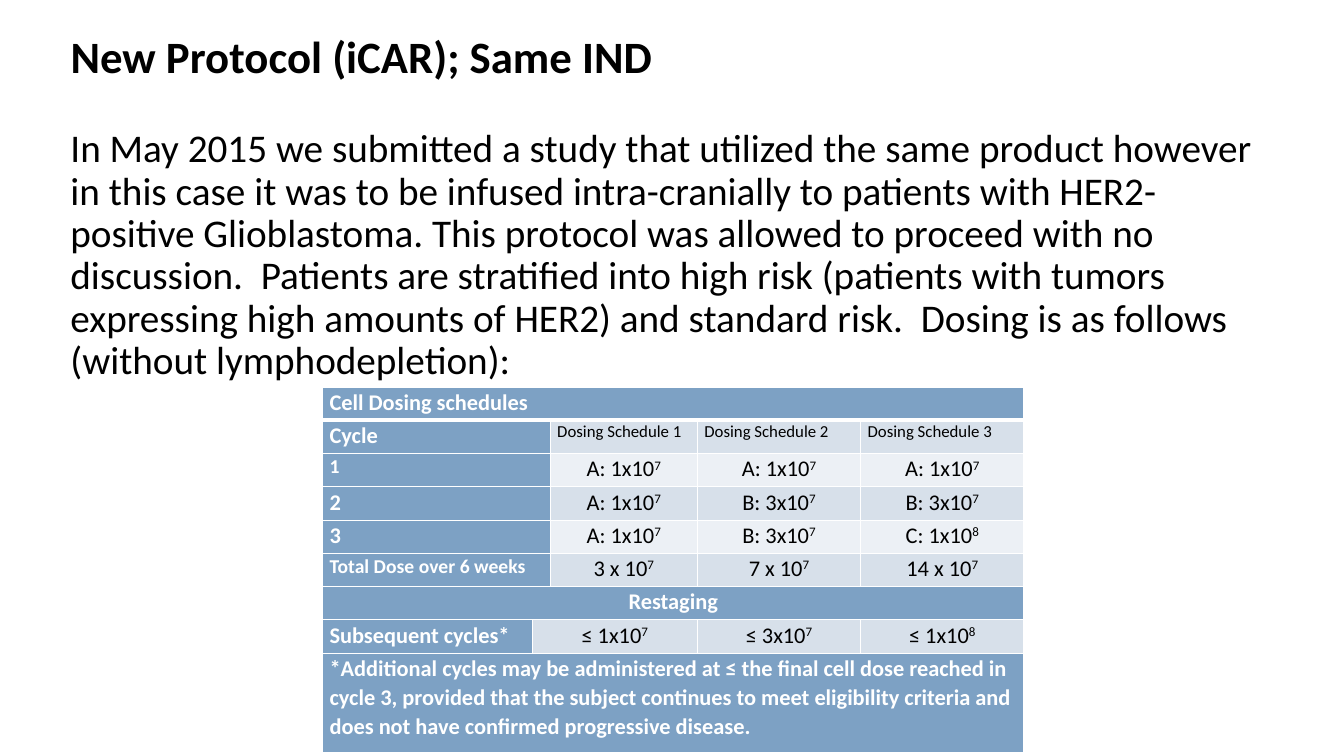
from dataclasses import dataclass

from lxml import etree
from pptx import Presentation
from pptx.dml.color import RGBColor
from pptx.enum.text import MSO_ANCHOR, MSO_AUTO_SIZE, PP_ALIGN
from pptx.oxml.ns import qn
from pptx.util import Inches, Length, Pt

LEFT, CENTER = PP_ALIGN.LEFT, PP_ALIGN.CENTER
TOP, MIDDLE = MSO_ANCHOR.TOP, MSO_ANCHOR.MIDDLE
NO_AUTOFIT = MSO_AUTO_SIZE.NONE

SLIDE_WIDTH, SLIDE_HEIGHT = 13.33, 7.5
FONT = "Calibri"
COLORS = {
    "text": "000000",
    "label_text": "FFFFFF",
    "border": "FFFFFF",
    "label": "7DA1C4",
    "odd": "D7E0EA",
    "even": "ECF0F5",
}
TITLE = "New Protocol (iCAR); Same IND"
STUDY = (
    "In May 2015 we submitted a study that utilized the same product however in this "
    "case it was to be infused intra-cranially to patients with HER2-positive "
    "Glioblastoma. This protocol was allowed to proceed with no discussion.  Patients "
    "are stratified into high risk (patients with tumors expressing high amounts of "
    "HER2) and standard risk.  Dosing is as follows (without lymphodepletion):"
)
NOTE = (
    "*Additional cycles may be administered at ≤ the final cell dose reached in cycle "
    "3, provided that the subject continues to meet eligibility criteria and does not "
    "have confirmed progressive disease."
)


@dataclass(frozen=True)
class Area:
    """A box in percent of the slide's width and height."""
    left: float
    top: float
    width: float
    height: float


@dataclass(frozen=True)
class ScheduleRow:
    """A label and its entries; ^ marks the start of a superscript."""
    label: str
    entries: tuple[str, ...] = ()
    band: str = "odd"
    label_size: int = 16
    entry_size: int = 16
    label_align: PP_ALIGN = LEFT
    entry_align: PP_ALIGN = CENTER
    label_columns: int = 2
    height: float = 4.4


TITLE_AREA = Area(4.5, 3.6, 74.8, 8.5)
STUDY_AREA = Area(4.5, 16.4, 91, 75.6)
SCHEDULE_AREA = Area(24, 51.2, 52, 48.4)
SCHEDULE_COLUMNS = (15.6, 1.2, 10.95, 12.15, 12.15)
SCHEDULE = (
    ScheduleRow("Cell Dosing schedules", label_columns=5),
    ScheduleRow("Cycle", tuple(f"Dosing Schedule {n}" for n in (1, 2, 3)),
                entry_size=12, entry_align=LEFT),
    ScheduleRow("1", ("A: 1x10^7", "A: 1x10^7", "A: 1x10^7"), "even", label_size=14),
    ScheduleRow("2", ("A: 1x10^7", "B: 3x10^7", "B: 3x10^7")),
    ScheduleRow("3", ("A: 1x10^7", "B: 3x10^7", "C: 1x10^8"), "even"),
    ScheduleRow("Total Dose over 6 weeks", ("3 x 10^7", "7 x 10^7", "14 x 10^7"),
                label_size=14),
    ScheduleRow("Restaging", label_align=CENTER, label_columns=5),
    ScheduleRow("Subsequent cycles*", ("≤ 1x10^7", "≤ 3x10^7", "≤ 1x10^8"),
                label_columns=1),
    ScheduleRow(NOTE, label_columns=5, height=13.2),
)


def across(percent: float) -> Length:
    return Inches(SLIDE_WIDTH * percent / 100)


def down(percent: float) -> Length:
    return Inches(SLIDE_HEIGHT * percent / 100)


def bounds(area: Area) -> tuple[Length, ...]:
    return across(area.left), down(area.top), across(area.width), down(area.height)


def write(frame, text: str, *, size: int, color: str = "text", bold: bool = False,
          align: PP_ALIGN = LEFT, spacing: float = 0.9) -> None:
    frame.word_wrap = True
    paragraph = frame.paragraphs[0]
    paragraph.alignment = align
    paragraph.line_spacing = spacing
    paragraph.space_before = Pt(0)
    base, _, power = text.partition("^")
    for part in filter(None, (base, power)):
        run = paragraph.add_run()
        run.text = part
        run.font.name = FONT
        run.font.size = Pt(size)
        run.font.bold = bold
        run.font.color.rgb = RGBColor.from_string(COLORS[color])
        if part is power:
            run._r.get_or_add_rPr().set("baseline", "30000")


def style_cell(cell, fill: str, top: int, bottom: int) -> None:
    """Set the fill, the margins and the border widths in points."""
    cell.margin_left = cell.margin_right = Inches(0.07)
    cell.margin_top = cell.margin_bottom = 0
    cell.vertical_anchor = TOP
    properties = cell._tc.get_or_add_tcPr()
    for side, width in {"lnL": 1, "lnR": 1, "lnT": top, "lnB": bottom}.items():
        line = etree.SubElement(properties, qn(f"a:{side}"), w=str(Pt(width)))
        solid = etree.SubElement(line, qn("a:solidFill"))
        etree.SubElement(solid, qn("a:srgbClr"), val=COLORS["border"])
    cell.fill.solid()
    cell.fill.fore_color.rgb = RGBColor.from_string(COLORS[fill])


def add_schedule(slide) -> None:
    column_count = len(SCHEDULE_COLUMNS)
    table = slide.shapes.add_table(
        len(SCHEDULE), column_count, *bounds(SCHEDULE_AREA)).table
    table.first_row = table.horz_banding = False
    for column, width in zip(table.columns, SCHEDULE_COLUMNS):
        column.width = across(width)
    for index, row in enumerate(SCHEDULE):
        table.rows[index].height = down(row.height)
        for column in range(column_count):
            style_cell(table.cell(index, column),
                       "label" if column < row.label_columns else row.band,
                       top=3 if index == 1 else 1, bottom=3 if index == 0 else 1)
        label = table.cell(index, 0)
        if row.label_columns > 1:
            label.merge(table.cell(index, row.label_columns - 1))
        write(label.text_frame, row.label, size=row.label_size, color="label_text",
              bold=True, align=row.label_align, spacing=1.07)
        if row.label_columns == 1:
            table.cell(index, 1).merge(table.cell(index, 2))
        first_entry = 1 if row.label_columns == 1 else 2
        for column, entry in zip((first_entry, 3, 4), row.entries):
            write(table.cell(index, column).text_frame, entry, size=row.entry_size,
                  align=row.entry_align, spacing=1.07)


def main() -> None:
    deck = Presentation()
    deck.slide_width, deck.slide_height = Inches(SLIDE_WIDTH), Inches(SLIDE_HEIGHT)
    slide = deck.slides.add_slide(deck.slide_layouts.get_by_name("Title Only"))

    study = slide.shapes.add_textbox(*bounds(STUDY_AREA))
    write(study.text_frame, STUDY, size=28)

    title = slide.shapes.title
    title.left, title.top, title.width, title.height = bounds(TITLE_AREA)
    title.text_frame.auto_size = NO_AUTOFIT
    title.text_frame.vertical_anchor = MIDDLE
    write(title.text_frame, TITLE, size=32, bold=True)

    add_schedule(slide)
    deck.save("out.pptx")


if __name__ == "__main__":
    main()
